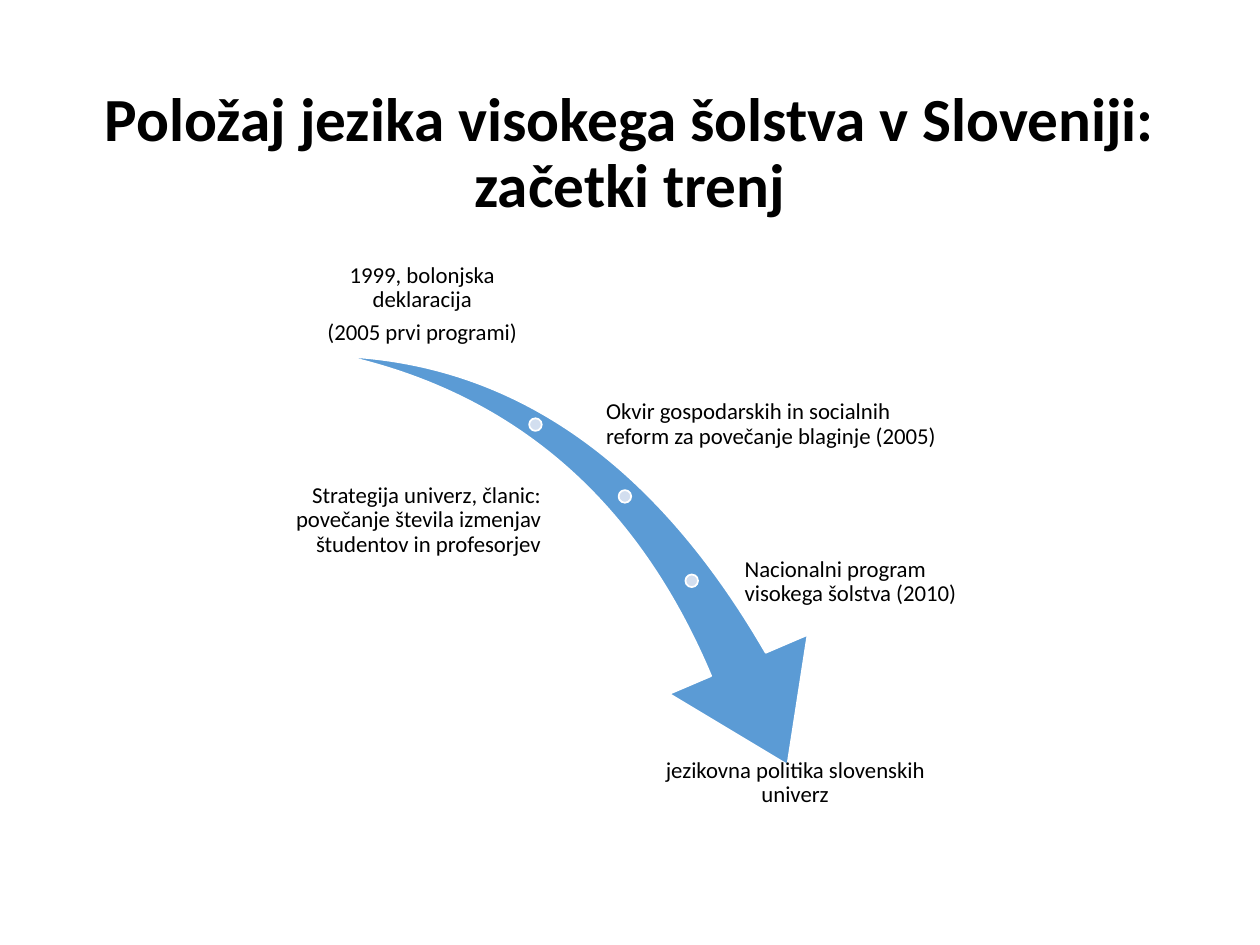
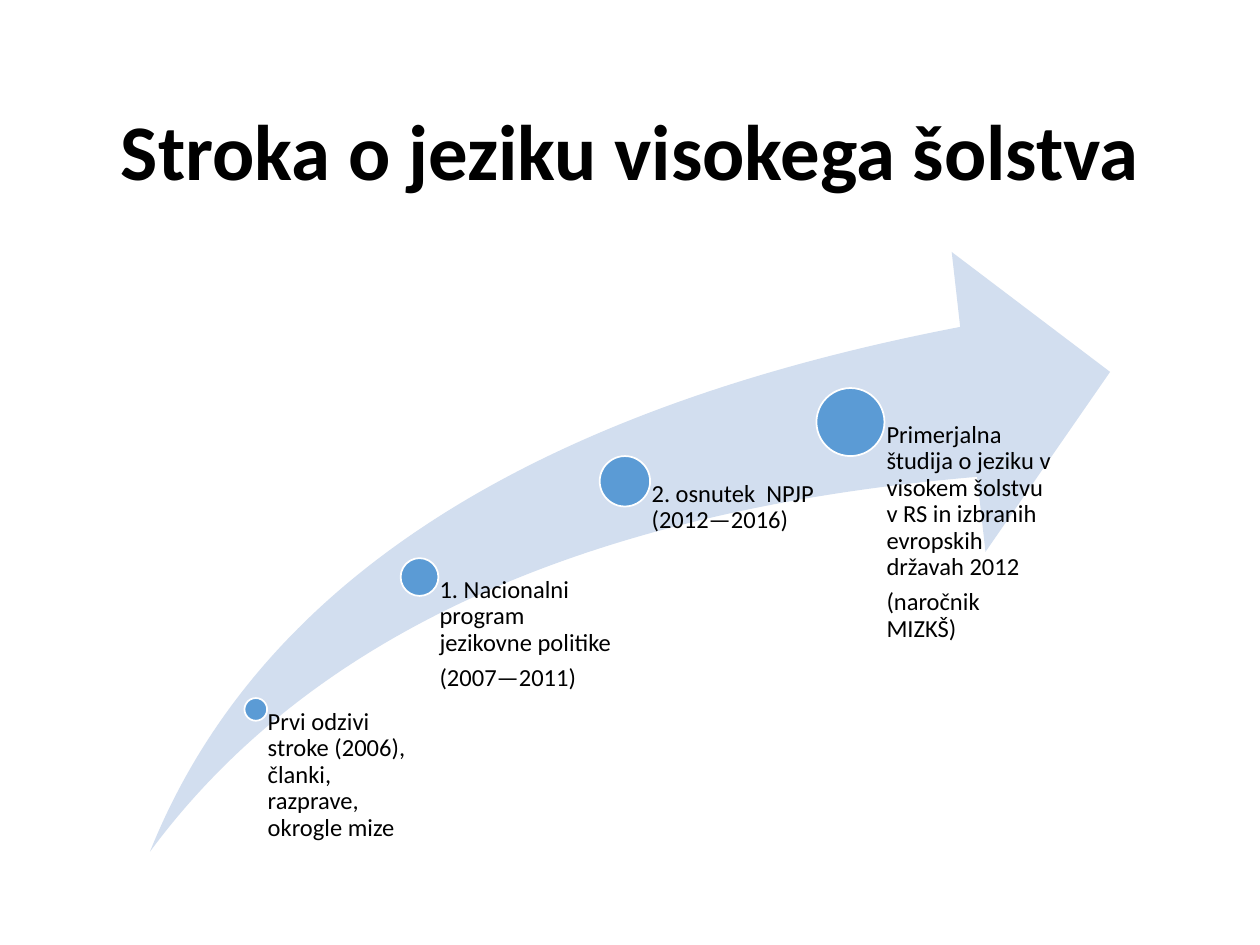
"""Build two slides on the language of higher education in Slovenia."""

from dataclasses import dataclass

from pptx import Presentation
from pptx.dml.color import RGBColor
from pptx.enum.shapes import MSO_SHAPE
from pptx.enum.text import MSO_ANCHOR, PP_ALIGN
from pptx.util import Inches, Pt

SWOOSH, OVAL = MSO_SHAPE.SWOOSH_ARROW, MSO_SHAPE.OVAL
TOP, MIDDLE, BOTTOM = MSO_ANCHOR.TOP, MSO_ANCHOR.MIDDLE, MSO_ANCHOR.BOTTOM
LEFT, CENTER, RIGHT = PP_ALIGN.LEFT, PP_ALIGN.CENTER, PP_ALIGN.RIGHT

COLORS = {"text": "000000", "blue": "5B9BD5", "pale": "D2DEEF", "white": "FFFFFF"}
FONT = "Calibri"
LINE_SPACING = 0.9
SPACE_RATIO = 0.35
TITLE_AREA = (0.69, 0.61, 8.62, 1.24)
TITLE_INSETS = (0.1, 0.05, 0.1, 0.05)
EVENT_INSETS = (0.02, 0.02, 0.02, 0.02)
EVENT_HEIGHT = 0.76
EVENT_SIZE, RESPONSE_SIZE = 13, 14
EVENT_DOT = 0.1
EVENT_DOTS = ((4.25, 3.37), (4.96, 3.94), (5.49, 4.61))
RESPONSE_BOTTOM = 6.76
RESPONSE_INDENT = 0.53


@dataclass(frozen=True)
class Event:
    """A caption beside the falling arrow."""

    lines: tuple[str, ...]
    left: float
    top: float
    width: float
    align: PP_ALIGN = LEFT
    anchor: MSO_ANCHOR = MIDDLE


@dataclass(frozen=True)
class Response:
    """A dot on the rising arrow with text hanging from its centre."""

    lines: tuple[str, ...]
    center_x: float
    center_y: float
    diameter: float
    width: float = 1.6


EVENTS = (
    Event(("1999, bolonjska deklaracija", "(2005 prvi programi)"), 2.38, 2, 1.94, CENTER, BOTTOM),
    Event(("Okvir gospodarskih in socialnih reform za povečanje blaginje (2005)",), 4.79, 2.99, 2.83),
    Event(
        ("Strategija univerz, članic: povečanje števila izmenjav študentov in profesorjev",),
        2.06, 3.75, 2.25, RIGHT,
    ),
    Event(("Nacionalni program visokega šolstva (2010)",), 5.89, 4.24, 1.73),
    Event(("jezikovna politika slovenskih univerz",), 5, 6, 2.62, CENTER, TOP),
)

RESPONSES = (
    Response(("Prvi odzivi stroke (2006), članki, razprave, okrogle mize",), 2.03, 5.63, 0.18, 1.3),
    Response(("1. Nacionalni program jezikovne politike", "(2007—2011)"), 3.33, 4.58, 0.3),
    Response(("2. osnutek  NPJP (2012—2016)",), 4.96, 3.82, 0.4),
    Response(
        (
            "Primerjalna študija o jeziku v visokem šolstvu v RS in izbranih evropskih državah 2012",
            "(naročnik MIZKŠ)",
        ),
        6.75, 3.35, 0.54,
    ),
)


def apply_format(target, values: dict) -> None:
    """Set each named attribute on the target."""
    for name, value in values.items():
        setattr(target, name, value)


def add_text(page, area, lines, size, insets, align=LEFT, anchor=TOP, bold=False) -> None:
    """Add a wrapped text box with one paragraph per line."""
    frame = page.shapes.add_textbox(*map(Inches, area)).text_frame
    sides = ("margin_left", "margin_top", "margin_right", "margin_bottom")
    apply_format(frame, {"word_wrap": True, "vertical_anchor": anchor})
    apply_format(frame, dict(zip(sides, map(Inches, insets))))
    for index, line in enumerate(lines):
        para = frame.add_paragraph() if index else frame.paragraphs[0]
        apply_format(para, {
            "alignment": align,
            "line_spacing": LINE_SPACING,
            "space_after": Pt(size * SPACE_RATIO),
        })
        span = para.add_run()
        span.text = line
        apply_format(span.font, {"name": FONT, "size": Pt(size), "bold": bold})
        span.font.color.rgb = RGBColor.from_string(COLORS["text"])


def add_figure(page, kind, area, fill: str, outlined: bool = True):
    """Add a filled shape with an optional thin white outline."""
    shape = page.shapes.add_shape(kind, *map(Inches, area))
    shape.shadow.inherit = False
    shape.fill.solid()
    shape.fill.fore_color.rgb = RGBColor.from_string(COLORS[fill])
    if outlined:
        shape.line.color.rgb = RGBColor.from_string(COLORS["white"])
        shape.line.width = Pt(1)
    else:
        shape.line.fill.background()
    return shape


def add_swoosh(page, area, fill: str, adjustments, outlined: bool, rotation: float = 0) -> None:
    """Add a curved arrow."""
    arrow = add_figure(page, SWOOSH, area, fill, outlined)
    arrow.rotation = rotation
    for index, value in enumerate(adjustments):
        arrow.adjustments[index] = value


def add_dot(page, center_x: float, center_y: float, diameter: float, fill: str) -> None:
    """Add a circle around a centre point."""
    radius = diameter / 2
    add_figure(page, OVAL, (center_x - radius, center_y - radius, diameter, diameter), fill)


def add_page(deck, title: str, title_size: int):
    """Add a blank slide with its title."""
    page = deck.slides.add_slide(deck.slide_layouts[6])
    add_text(page, TITLE_AREA, (title,), title_size, TITLE_INSETS, CENTER, MIDDLE, bold=True)
    return page


def build_events(deck) -> None:
    """Build the slide with the falling arrow."""
    page = add_page(deck, "Položaj jezika visokega šolstva v Sloveniji: začetki trenj", 35)
    add_swoosh(page, (2.66, 2.95, 4.11, 2.87), "blue", (0.163, 0.314), True, 73.3)
    for center_x, center_y in EVENT_DOTS:
        add_dot(page, center_x, center_y, EVENT_DOT, "pale")
    for event in EVENTS:
        area = (event.left, event.top, event.width, EVENT_HEIGHT)
        add_text(page, area, event.lines, EVENT_SIZE, EVENT_INSETS, event.align, event.anchor)


def build_responses(deck) -> None:
    """Build the slide with the rising arrow."""
    page = add_page(deck, "Stroka o jeziku visokega šolstva", 45)
    add_swoosh(page, (1.19, 2, 7.62, 4.76), "pale", (0.25, 0.25), False)
    for response in RESPONSES:
        left, top = response.center_x, response.center_y
        add_dot(page, left, top, response.diameter, "blue")
        area = (left, top, response.width, RESPONSE_BOTTOM - top)
        insets = (response.diameter * RESPONSE_INDENT, 0, 0, 0)
        add_text(page, area, response.lines, RESPONSE_SIZE, insets)


def main() -> None:
    """Create and save the deck."""
    deck = Presentation()
    apply_format(deck, {"slide_width": Inches(10), "slide_height": Inches(7.5)})
    build_events(deck)
    build_responses(deck)
    deck.save("out.pptx")


if __name__ == "__main__":
    main()
